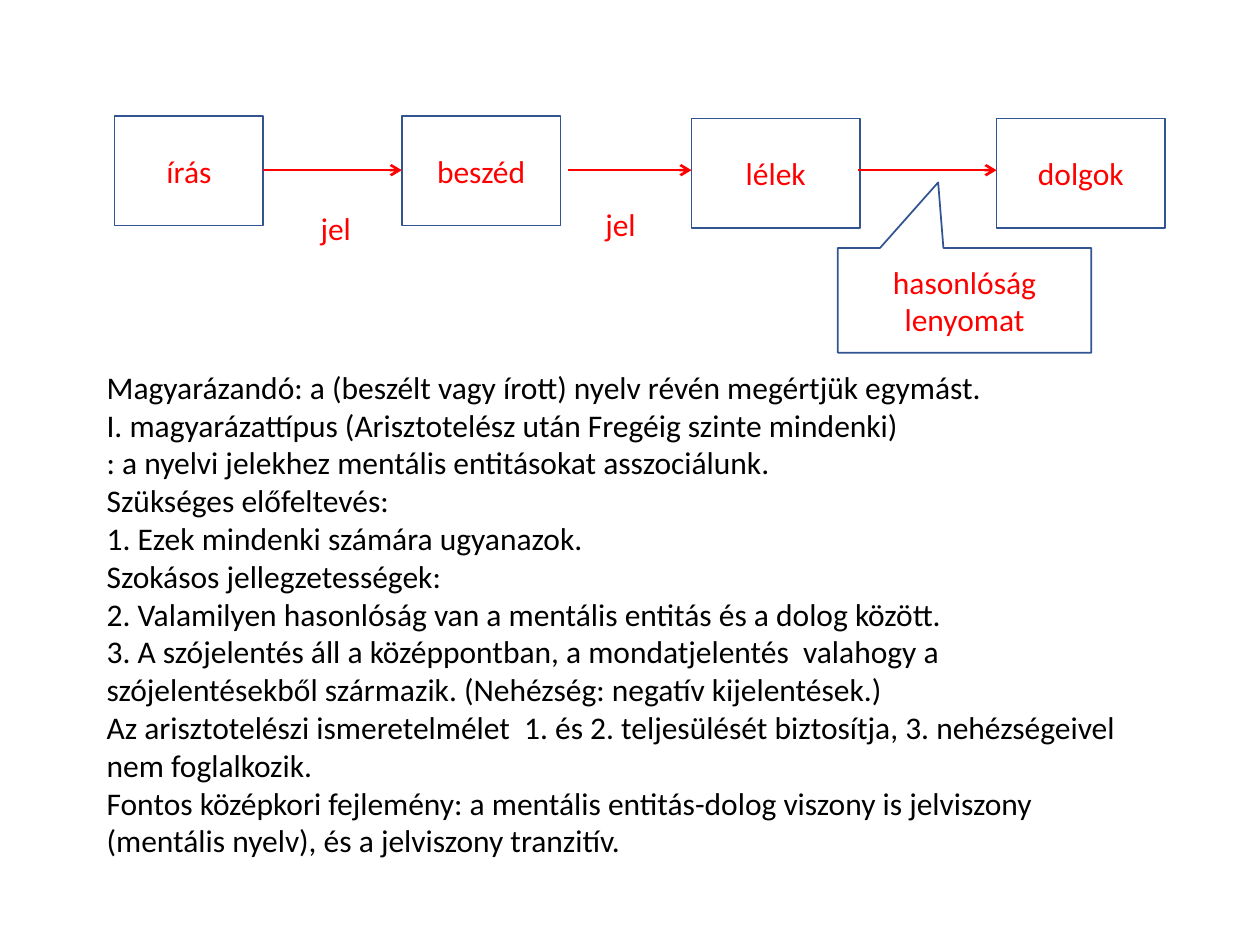
from dataclasses import dataclass

from lxml import etree
from pptx import Presentation
from pptx.dml.color import RGBColor
from pptx.enum.shapes import MSO_CONNECTOR, MSO_SHAPE
from pptx.enum.text import MSO_ANCHOR, PP_ALIGN
from pptx.oxml.ns import qn
from pptx.slide import Slide
from pptx.text.text import TextFrame
from pptx.util import Cm, Pt

RECTANGLE = MSO_SHAPE.RECTANGLE
CALLOUT = MSO_SHAPE.RECTANGULAR_CALLOUT
STRAIGHT = MSO_CONNECTOR.STRAIGHT
MIDDLE, TOP = MSO_ANCHOR.MIDDLE, MSO_ANCHOR.TOP
CENTER, LEFT = PP_ALIGN.CENTER, PP_ALIGN.LEFT


@dataclass(frozen=True)
class Theme:
    font: str = "Calibri"
    size: Pt = Pt(18)
    accent: RGBColor = RGBColor(0xFF, 0x00, 0x00)
    body: RGBColor = RGBColor(0x00, 0x00, 0x00)
    outline: RGBColor = RGBColor(0x32, 0x54, 0x91)
    fill: RGBColor = RGBColor(0xFF, 0xFF, 0xFF)
    outline_width: Pt = Pt(1)
    arrow_width: Pt = Pt(1.5)


@dataclass(frozen=True)
class Block:
    lines: tuple[str, ...]
    left: float
    top: float
    width: float
    height: float

    def frame(self) -> tuple[Cm, Cm, Cm, Cm]:
        return Cm(self.left), Cm(self.top), Cm(self.width), Cm(self.height)


@dataclass(frozen=True)
class Arrow:
    start: float
    end: float


THEME = Theme()
ARROW_HEIGHT = 3.43

BOXES = (
    Block(("írás",), 2.31, 2.34, 3, 2.21),
    Block(("beszéd",), 8.1, 2.34, 3.2, 2.21),
    Block(("lélek",), 13.94, 2.39, 3.4, 2.21),
    Block(("dolgok",), 20.09, 2.39, 3.4, 2.21),
)
ARROWS = (Arrow(5.31, 8.1), Arrow(17.3, 20.09), Arrow(11.46, 13.94))
SIGN_LABELS = (
    Block(("jel",), 5.97, 4.09, 1.6, 1.02),
    Block(("jel",), 11.71, 4.01, 1.6, 1.02),
)
RESEMBLANCE = Block(("hasonlóság", "lenyomat"), 16.89, 5, 5.11, 2.11)
POINTER = (-0.104, -1.127)
EXPLANATION = Block(
    (
        "Magyarázandó: a (beszélt vagy írott) nyelv révén megértjük egymást.",
        "I. magyarázattípus (Arisztotelész után Fregéig szinte mindenki)\v"
        ": a nyelvi jelekhez mentális entitásokat asszociálunk.",
        "Szükséges előfeltevés:",
        "1. Ezek mindenki számára ugyanazok.",
        "Szokásos jellegzetességek:",
        "2. Valamilyen hasonlóság van a mentális entitás és a dolog között.",
        "3. A szójelentés áll a középpontban, a mondatjelentés  valahogy a "
        "szójelentésekből származik. (Nehézség: negatív kijelentések.)",
        "Az arisztotelészi ismeretelmélet  1. és 2. teljesülését biztosítja, "
        "3. nehézségeivel nem foglalkozik.",
        "Fontos középkori fejlemény: a mentális entitás-dolog viszony is "
        "jelviszony (mentális nyelv), és a jelviszony tranzitív.",
    ),
    1.9, 7.29, 21.21, 10.26,
)


def write_lines(text_frame: TextFrame, lines: tuple[str, ...], color: RGBColor,
                alignment: PP_ALIGN, anchor: MSO_ANCHOR) -> None:
    text_frame.word_wrap = True
    text_frame.vertical_anchor = anchor
    for index, line in enumerate(lines):
        paragraph = text_frame.add_paragraph() if index else text_frame.paragraphs[0]
        paragraph.text = line
        paragraph.alignment = alignment
        paragraph.font.name = THEME.font
        paragraph.font.size = THEME.size
        paragraph.font.color.rgb = color


def draw_box(slide: Slide, block: Block, kind: MSO_SHAPE = RECTANGLE,
             adjustments: tuple[float, ...] = ()) -> None:
    shape = slide.shapes.add_shape(kind, *block.frame())
    for index, value in enumerate(adjustments):
        shape.adjustments[index] = value
    shape.shadow.inherit = False
    shape.fill.solid()
    shape.fill.fore_color.rgb = THEME.fill
    shape.line.color.rgb = THEME.outline
    shape.line.width = THEME.outline_width
    write_lines(shape.text_frame, block.lines, THEME.accent, CENTER, MIDDLE)


def draw_text(slide: Slide, block: Block, color: RGBColor, alignment: PP_ALIGN) -> None:
    text_box = slide.shapes.add_textbox(*block.frame())
    write_lines(text_box.text_frame, block.lines, color, alignment, TOP)


def draw_arrow(slide: Slide, arrow: Arrow) -> None:
    connector = slide.shapes.add_connector(
        STRAIGHT, Cm(arrow.start), Cm(ARROW_HEIGHT), Cm(arrow.end), Cm(ARROW_HEIGHT))
    connector.line.color.rgb = THEME.accent
    connector.line.width = THEME.arrow_width
    properties = connector._element.spPr
    etree.SubElement(properties.find(qn("a:ln")), qn("a:tailEnd"), type="arrow")
    etree.SubElement(properties, qn("a:effectLst"))


def main() -> None:
    presentation = Presentation()
    presentation.slide_width, presentation.slide_height = Cm(25.4), Cm(19.05)
    slide = presentation.slides.add_slide(presentation.slide_layouts[6])
    for box in BOXES:
        draw_box(slide, box)
    for arrow in ARROWS:
        draw_arrow(slide, arrow)
    for label in SIGN_LABELS:
        draw_text(slide, label, THEME.accent, CENTER)
    draw_box(slide, RESEMBLANCE, CALLOUT, POINTER)
    draw_text(slide, EXPLANATION, THEME.body, LEFT)
    presentation.save("out.pptx")


if __name__ == "__main__":
    main()
